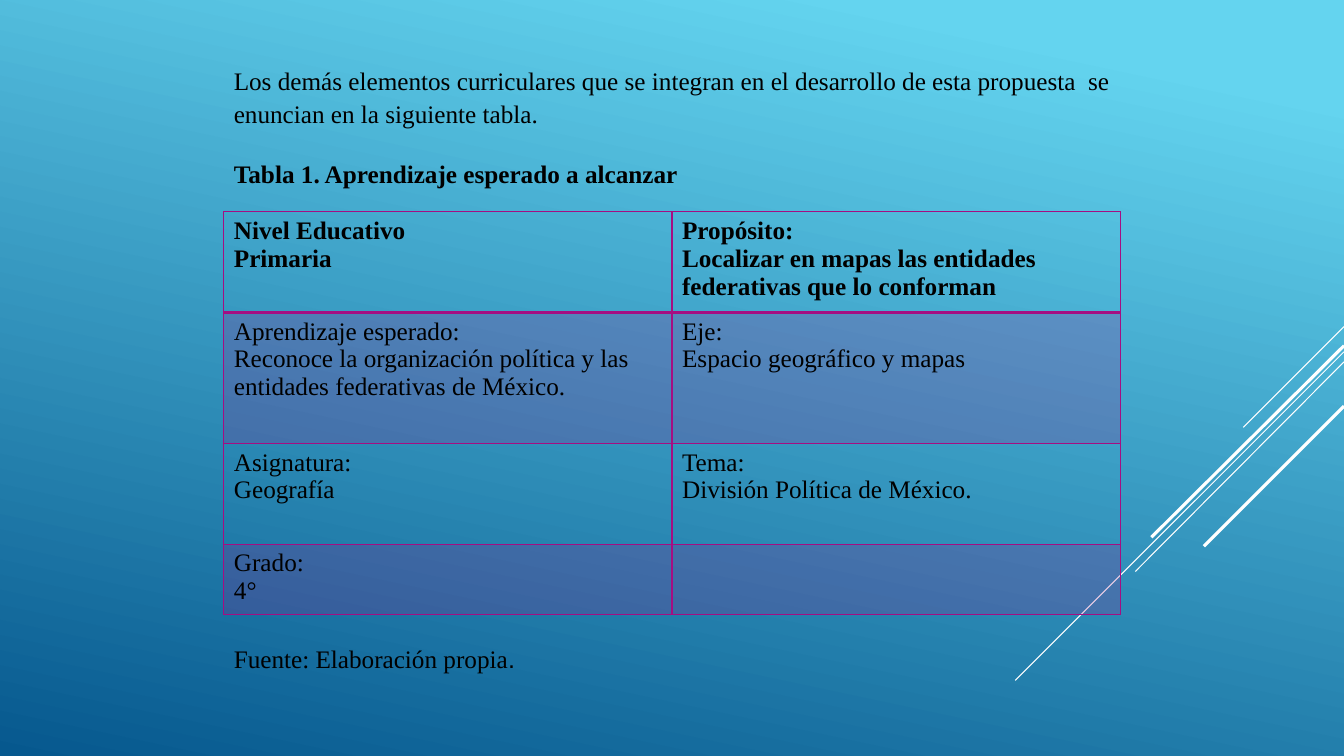
from copy import deepcopy
from dataclasses import dataclass

from lxml.etree import SubElement as Sub
from pptx import Presentation
from pptx.dml.color import RGBColor as Rgb
from pptx.enum.shapes import MSO_CONNECTOR as Conn
from pptx.enum.text import MSO_ANCHOR as Anchor, PP_ALIGN as Align
from pptx.oxml.ns import qn
from pptx.util import Inches, Pt


@dataclass(frozen=True)
class Theme:
    ink: str = "000000"
    ray: str = "FFFFFF"
    rule: str = "A50E82"
    light: str = "64D4EF"
    deep: str = "06588E"
    font: str = "Times New Roman"
    alt: str = "Arial"
    size: int = 18
    lead: float = 1.07
    tint: int = 20


THEME = Theme()
LEFT, WIDTH = 2.22, 8.89
EDGE = 13.33
RAYS = [
    (3.24, 12.33, 4.24, 0.75),
    (3.49, 10.07, 6.75, 0.75),
    (3.59, 11.26, 5.67, 0.75),
    (3.43, 11.42, 5.33, 2.25),
    (4.03, 11.94, 5.42, 2.25),
]
INTRO = ("Los demás elementos curriculares que se integran en el desarrollo "
         "de esta propuesta  se enuncian en la siguiente tabla.")
ROWS = [
    (1.0, ["Nivel Educativo", "Primaria"],
     ["Propósito:",
      "Localizar en mapas las entidades federativas que lo conforman"]),
    (1.3, ["Aprendizaje esperado:",
           "Reconoce la organización política y las entidades federativas de México."],
     ["Eje:", "Espacio geográfico y mapas"]),
    (1.0, ["Asignatura:", "Geografía"],
     ["Tema:", "División Política de México."]),
    (0.7, ["Grado:", "4°"], []),
]


def write(para, text, font=THEME.font, bold=False, align=Align.LEFT, lead=None):
    run = para.add_run()
    run.text = text
    run.font.name = font
    run.font.size = Pt(THEME.size)
    run.font.bold = bold
    run.font.color.rgb = Rgb.from_string(THEME.ink)
    para.alignment = align
    if lead:
        para.line_spacing = lead


def paint(slide):
    fill = slide.background.fill
    fill.gradient()
    fill.gradient_angle = 258
    first = fill.gradient_stops[0]
    first.color.rgb = Rgb.from_string(THEME.light)
    last = fill.gradient_stops[1]
    last.color.rgb = Rgb.from_string(THEME.deep)
    last.position = 1
    stops = slide.element.find(".//" + qn("a:gsLst"))
    stops.insert(1, deepcopy(stops[0]))
    fill.gradient_stops[0].position = 0
    fill.gradient_stops[1].position = 0.1


def draw_ray(slide, top, end, low, width):
    ray = slide.shapes.add_connector(
        Conn.STRAIGHT, Inches(EDGE), Inches(top), Inches(end), Inches(low))
    ray.line.color.rgb = Rgb.from_string(THEME.ray)
    ray.line.width = Pt(width)
    Sub(ray.element.spPr, qn("a:effectLst"))


def add_text(slide, top, width, height, text, **style):
    box = slide.shapes.add_textbox(
        Inches(LEFT), Inches(top), Inches(width), Inches(height))
    box.text_frame.word_wrap = True
    para = box.text_frame.paragraphs[0]
    write(para, text, lead=THEME.lead, **style)
    return para


def set_title(slide, text):
    title = slide.shapes.title
    title.left, title.top = Inches(LEFT), Inches(1.5)
    title.width, title.height = Inches(5), Inches(0.4)
    title.text_frame.vertical_anchor = Anchor.TOP
    write(title.text_frame.paragraphs[0], text, bold=True, lead=THEME.lead)


def add_rule(cell, side, width):
    line = Sub(cell._tc.get_or_add_tcPr(), qn("a:ln" + side), w=str(Pt(width)))
    Sub(Sub(line, qn("a:solidFill")), qn("a:srgbClr"), val=THEME.rule)


def style_cell(cell, row):
    for side in "LRTB":
        heavy = (row, side) in ((0, "B"), (1, "T"))
        add_rule(cell, side, 2 if heavy else 1)
    if row % 2 == 0:
        cell.fill.background()
        return
    cell.fill.solid()
    cell.fill.fore_color.rgb = Rgb.from_string(THEME.rule)
    color = cell._tc.tcPr.find(qn("a:solidFill"))[0]
    Sub(color, qn("a:alpha"), val=str(THEME.tint * 1000))


def add_grid(slide):
    high = sum(row[0] for row in ROWS)
    grid = slide.shapes.add_table(
        len(ROWS), 2, Inches(LEFT), Inches(2.1), Inches(WIDTH), Inches(high)).table
    grid.first_row = grid.horz_banding = False
    for row, (height, *cells) in enumerate(ROWS):
        grid.rows[row].height = Inches(height)
        for col, lines in enumerate(cells):
            cell = grid.cell(row, col)
            style_cell(cell, row)
            frame = cell.text_frame
            for num, line in enumerate(lines):
                para = frame.add_paragraph() if num else frame.paragraphs[0]
                write(para, line, bold=row == 0)


def main():
    deck = Presentation()
    deck.slide_width, deck.slide_height = Inches(EDGE), Inches(7.5)
    slide = deck.slides.add_slide(deck.slide_layouts[5])
    paint(slide)
    for ray in RAYS:
        draw_ray(slide, *ray)
    set_title(slide, "Tabla 1. Aprendizaje esperado a alcanzar")
    add_grid(slide)
    note = add_text(slide, 6.31, 3.41, 0.4, "Fuente: Elaboración propia")
    write(note, ".", font=THEME.alt)
    add_text(slide, 0.58, WIDTH, 0.71, INTRO, align=Align.JUSTIFY)
    deck.save("out.pptx")


if __name__ == "__main__":
    main()
